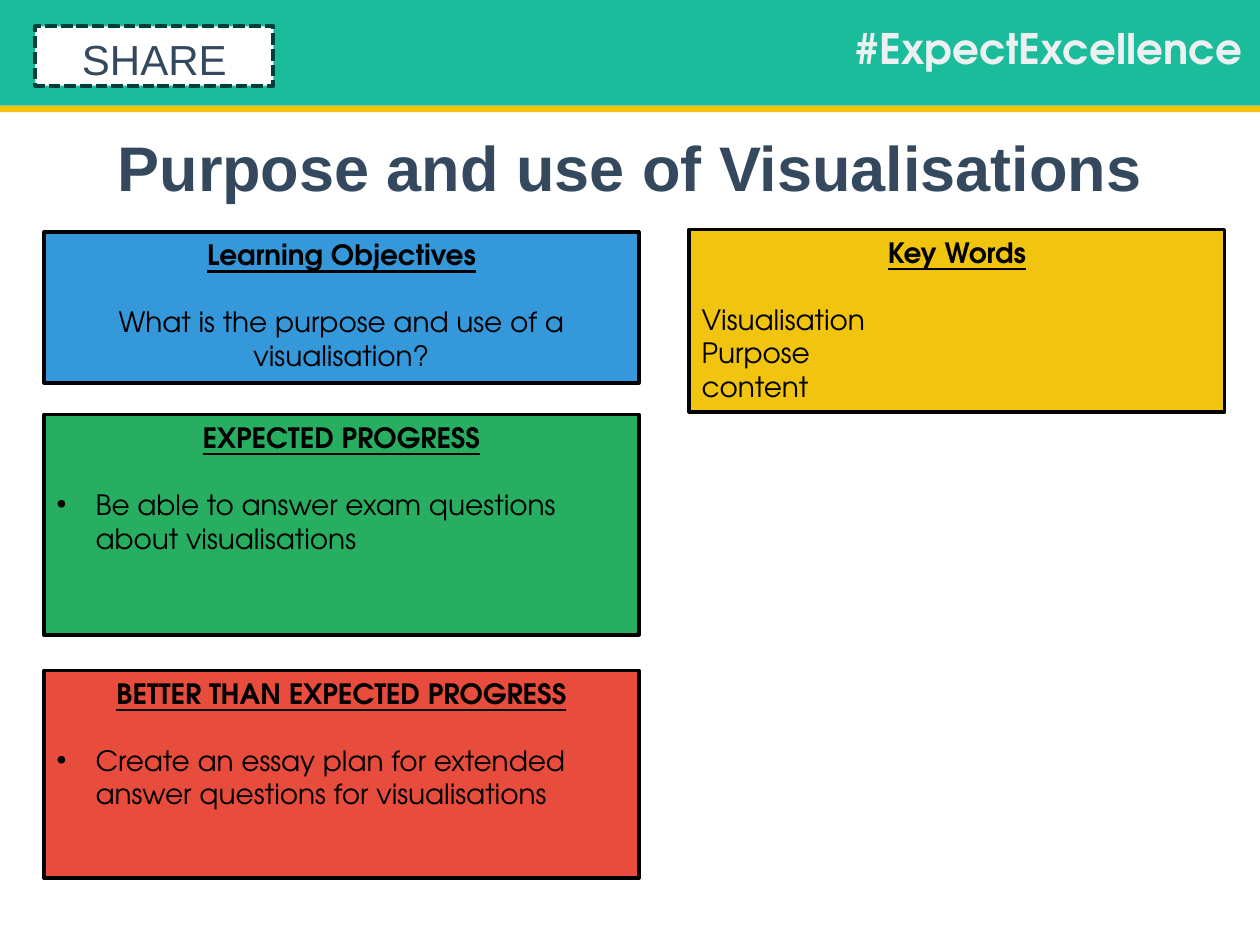
from dataclasses import dataclass

from lxml.etree import SubElement
from pptx import Presentation
from pptx.dml.color import RGBColor
from pptx.enum.dml import MSO_LINE_DASH_STYLE as Dash
from pptx.enum.shapes import MSO_SHAPE as Shape
from pptx.enum.text import MSO_ANCHOR as Anchor
from pptx.enum.text import MSO_AUTO_SIZE as AutoSize
from pptx.enum.text import PP_ALIGN as Align
from pptx.oxml.ns import qn
from pptx.util import Inches, Pt


@dataclass(frozen=True)
class Theme:
    teal: str = "1ABC9C"
    stripe: str = "F4C20D"
    pale: str = "ECF0F1"
    white: str = "FFFFFF"
    dash: str = "003F3E"
    ink: str = "34495E"
    black: str = "000000"
    blue: str = "3498DB"
    green: str = "27AE60"
    red: str = "E74C3C"
    yellow: str = "F1C40F"
    plain_font: str = "Arial"
    card_font: str = "TeX Gyre Adventor"
    title_size: int = 36
    label_size: int = 24
    card_size: int = 16
    card_gap: int = 19


def write(para, text, *, font, size, color, bold=False, underline=False,
          align=Align.LEFT, before=0, bullet=None):
    properties = para._p.get_or_add_pPr()
    indent = Inches(0.31) if bullet else 0
    properties.set("marL", str(indent))
    properties.set("indent", str(-indent))
    if bullet:
        SubElement(properties, qn("a:buFont")).set("typeface", "Arial")
        SubElement(properties, qn("a:buChar")).set("char", bullet)
    else:
        SubElement(properties, qn("a:buNone"))
    para.alignment = align
    para.space_before = Pt(before)
    span = para.add_run()
    span.text = text
    span.font.name = font
    span.font.size = Pt(size)
    span.font.bold = bold
    span.font.underline = underline
    span.font.color.rgb = RGBColor.from_string(color)


class Builder:
    def __init__(self, page, theme):
        self.page = page
        self.theme = theme

    def place(self, box, area):
        box.left, box.top, box.width, box.height = map(Inches, area)

    def paint(self, box, fill, line=None, width=2):
        box.fill.solid()
        box.fill.fore_color.rgb = RGBColor.from_string(fill)
        if line:
            box.line.color.rgb = RGBColor.from_string(line)
            box.line.width = Pt(width)
        else:
            box.line.fill.background()

    def block(self, area, fill, line=None):
        box = self.page.shapes.add_shape(Shape.RECTANGLE, *map(Inches, area))
        box.shadow.inherit = False
        self.paint(box, fill, line)
        return box

    def hashtag(self, text, area):
        frame = self.page.shapes.add_textbox(*map(Inches, area)).text_frame
        frame.word_wrap = True
        write(frame.paragraphs[0], text, font=self.theme.card_font,
              size=self.theme.label_size, color=self.theme.pale, bold=True,
              align=Align.RIGHT)

    def holder(self, box, text, area, size, anchor, top, bottom, bold=False):
        self.place(box, area)
        box.element.getparent().append(box.element)
        frame = box.text_frame
        frame.word_wrap = True
        frame.auto_size = AutoSize.NONE
        frame.vertical_anchor = anchor
        frame.margin_top, frame.margin_bottom = Inches(top), Inches(bottom)
        write(frame.paragraphs[0], text, font=self.theme.plain_font, size=size,
              color=self.theme.ink, bold=bold, align=Align.CENTER)

    def title(self, text, area):
        self.holder(self.page.shapes.title, text, area, self.theme.title_size,
                    Anchor.TOP, 0.1, 0.05, bold=True)

    def label(self, text, area):
        box = self.page.placeholders[1]
        self.holder(box, text, area, self.theme.label_size, Anchor.MIDDLE, 0.05, 0)
        self.paint(box, self.theme.white, self.theme.dash, 2.25)
        box.line.dash_style = Dash.SQUARE_DOT

    def card(self, heading, lines, area, fill, align=Align.LEFT, bullet=None, grow=False):
        frame = self.block(area, fill, self.theme.black).text_frame
        frame.word_wrap = True
        frame.vertical_anchor = Anchor.TOP
        frame.auto_size = AutoSize.SHAPE_TO_FIT_TEXT if grow else AutoSize.NONE
        style = dict(font=self.theme.card_font, size=self.theme.card_size,
                     color=self.theme.black)
        write(frame.paragraphs[0], heading, bold=True, underline=True,
              align=Align.CENTER, **style)
        for index, line in enumerate(lines):
            write(frame.add_paragraph(), line, align=align, bullet=bullet,
                  before=0 if index else self.theme.card_gap, **style)


def main():
    deck = Presentation()
    deck.slide_width, deck.slide_height = Inches(10), Inches(7.5)
    theme = Theme()
    builder = Builder(deck.slides.add_slide(deck.slide_layouts[1]), theme)

    builder.block((0, -0.02, 10, 0.86), theme.teal)
    builder.block((-0.02, 0.84, 10.02, 0.05), theme.stripe)
    builder.hashtag("#ExpectExcellence", (5.94, 0.13, 4.02, 0.39))
    builder.label("SHARE", (0.28, 0.21, 1.89, 0.47))

    left, width = 0.35, 4.72
    builder.card("Learning Objectives",
                 ["What is the purpose and use of a visualisation?"],
                 (left, 1.84, width, 1.2), theme.blue, align=Align.CENTER)
    builder.card("EXPECTED PROGRESS",
                 ["Be able to answer exam questions about visualisations"],
                 (left, 3.29, width, 1.75), theme.green, bullet="•")
    builder.card("BETTER THAN EXPECTED PROGRESS",
                 ["Create an essay plan for extended answer questions for visualisations"],
                 (left, 5.32, width, 1.65), theme.red, bullet="•")
    builder.card("Key Words", ["Visualisation", "Purpose", "content"],
                 (5.47, 1.82, 4.25, 1.45), theme.yellow, grow=True)
    builder.title("Purpose and use of Visualisations", (0.5, 0.92, 9, 0.97))

    deck.save("out.pptx")


if __name__ == "__main__":
    main()
